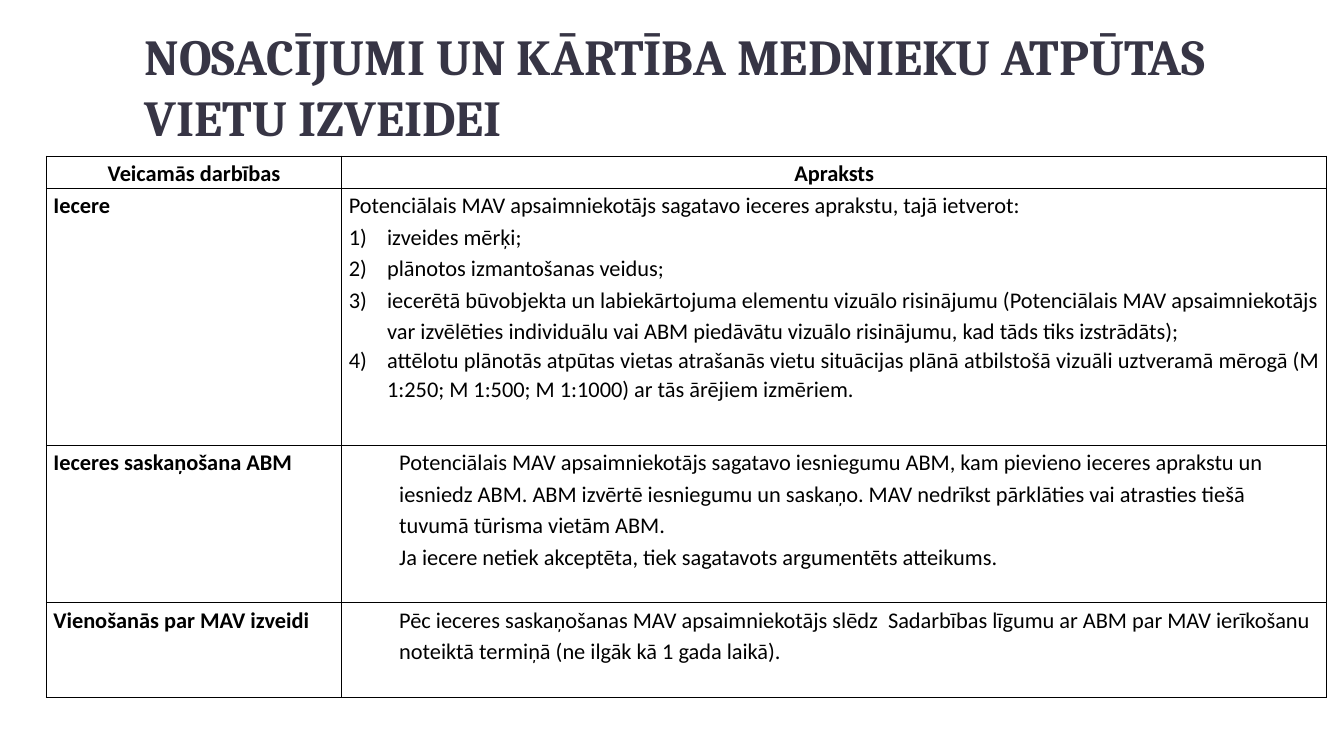
from lxml import etree
from pptx import Presentation, util as u
from pptx.dml.color import RGBColor
from pptx.enum import text
from pptx.oxml import ns

WIDE, HIGH = 13.33, 7.5
INK, BLACK = "373545", "000000"
COLS = [2.93, 9.77]
ROWS = [0.32, 2.55, 1.56, 0.94]
HEADS = ["Veicamās darbības", "Apraksts"]
LIST = {"left": 0.38, "hang": -0.38, "mark": True}
LAST = {**LIST, "align": text.PP_ALIGN.JUSTIFY, "lead": 1.05, "after": 8}
STEP = {"left": 0.5}
STAGES = [
    ("Iecere", [
        ("Potenciālais MAV apsaimniekotājs sagatavo ieceres aprakstu, tajā ietverot:", {}),
        ("izveides mērķi;", LIST),
        ("plānotos izmantošanas veidus;", LIST),
        ("iecerētā būvobjekta un labiekārtojuma elementu vizuālo risinājumu "
         "(Potenciālais MAV apsaimniekotājs var izvēlēties individuālu vai ABM "
         "piedāvātu vizuālo risinājumu, kad tāds tiks izstrādāts);", LIST),
        ("attēlotu plānotās atpūtas vietas atrašanās vietu situācijas plānā "
         "atbilstošā vizuāli uztveramā mērogā (M 1:250; M 1:500; M 1:1000) ar tās "
         "ārējiem izmēriem.", LAST),
    ]),
    ("Ieceres saskaņošana ABM", [
        ("Potenciālais MAV apsaimniekotājs sagatavo iesniegumu ABM, kam pievieno "
         "ieceres aprakstu un iesniedz ABM. ABM izvērtē iesniegumu un saskaņo. MAV "
         "nedrīkst pārklāties vai atrasties tiešā tuvumā tūrisma vietām ABM.", STEP),
        ("Ja iecere netiek akceptēta, tiek sagatavots argumentēts atteikums.", STEP),
    ]),
    ("Vienošanās par MAV izveidi", [
        ("Pēc ieceres saskaņošanas MAV apsaimniekotājs slēdz  Sadarbības līgumu ar "
         "ABM par MAV ierīkošanu noteiktā termiņā (ne ilgāk kā 1 gada laikā).", STEP),
    ]),
]


def paint(font, tint, **form):
    font.color.rgb = RGBColor.from_string(tint)
    for key, value in form.items():
        setattr(font, key, value)


def indent(para, left=0, hang=0, mark=False):
    """Set the margin and hanging indent, and number the paragraph as 1) if marked."""
    props = para._p.get_or_add_pPr()
    props.set("marL", str(u.Inches(left)))
    props.set("indent", str(u.Inches(hang)))
    if mark:
        etree.SubElement(props, ns.qn("a:buFont"), typeface="+mj-lt")
        etree.SubElement(props, ns.qn("a:buAutoNum"), type="arabicParenR")


def border(cell):
    cell.fill.background()
    props = cell._tc.get_or_add_tcPr()
    for spot, side in enumerate("LRTB"):
        line = etree.Element(ns.qn("a:ln" + side), w=str(u.Pt(1)))
        fill = etree.SubElement(line, ns.qn("a:solidFill"))
        etree.SubElement(fill, ns.qn("a:srgbClr"), val=BLACK)
        props.insert(spot, line)


def write(cell, paras, bold, pad=0.07):
    form = {"margin_left": u.Inches(pad), "margin_right": u.Inches(pad),
            "margin_top": 0, "margin_bottom": 0}
    for key, value in form.items():
        setattr(cell, key, value)
    frame = cell.text_frame
    for spot, (words, style) in enumerate(paras):
        para = frame.paragraphs[0] if spot == 0 else frame.add_paragraph()
        para.alignment = style.get("align", text.PP_ALIGN.LEFT)
        para.line_spacing = style.get("lead", 1.15)
        para.space_after = u.Pt(style.get("after", 0))
        indent(para, **{key: style[key] for key in ("left", "hang", "mark") if key in style})
        run = para.add_run()
        run.text = words
        paint(run.font, BLACK, name="Calibri", size=u.Pt(16), bold=bold)
    border(cell)


def add_head(slide, left, top, width, height):
    title = slide.shapes.title
    box = {"left": left, "top": top, "width": width, "height": height}
    for key, value in box.items():
        setattr(title, key, u.Inches(value))
    frame = title.text_frame
    form = {"word_wrap": True, "auto_size": text.MSO_AUTO_SIZE.NONE,
            "vertical_anchor": text.MSO_ANCHOR.BOTTOM, "margin_bottom": u.Inches(0.1)}
    for key, value in form.items():
        setattr(frame, key, value)
    para = frame.paragraphs[0]
    para.alignment = text.PP_ALIGN.LEFT
    run = para.add_run()
    run.text = "NOSACĪJUMI UN KĀRTĪBA MEDNIEKU ATPŪTAS VIETU IZVEIDEI"
    paint(run.font, INK, name="Cambria", size=u.Pt(36), bold=True)


def add_grid(slide, left, top):
    box = [u.Inches(size) for size in (left, top, sum(COLS), sum(ROWS))]
    grid = slide.shapes.add_table(len(ROWS), len(COLS), *box).table
    grid.first_row = grid.horz_banding = False
    for col, size in zip(grid.columns, COLS):
        col.width = u.Inches(size)
    for row, size in zip(grid.rows, ROWS):
        row.height = u.Inches(size)
    for col, words in enumerate(HEADS):
        write(grid.cell(0, col), [(words, {"align": text.PP_ALIGN.CENTER})], True, 0.04)
    for row, (name, paras) in enumerate(STAGES, 1):
        write(grid.cell(row, 0), [(name, {})], True)
        write(grid.cell(row, 1), paras, False)


def main():
    deck = Presentation()
    deck.slide_width, deck.slide_height = u.Inches(WIDE), u.Inches(HIGH)
    slide = deck.slides.add_slide(deck.slide_layouts[5])
    add_head(slide, WIDE * 0.1, HIGH * 0.04, WIDE * 0.85, HIGH / 6)
    add_grid(slide, 0.46, 1.55)
    deck.save("out.pptx")


if __name__ == "__main__":
    main()
